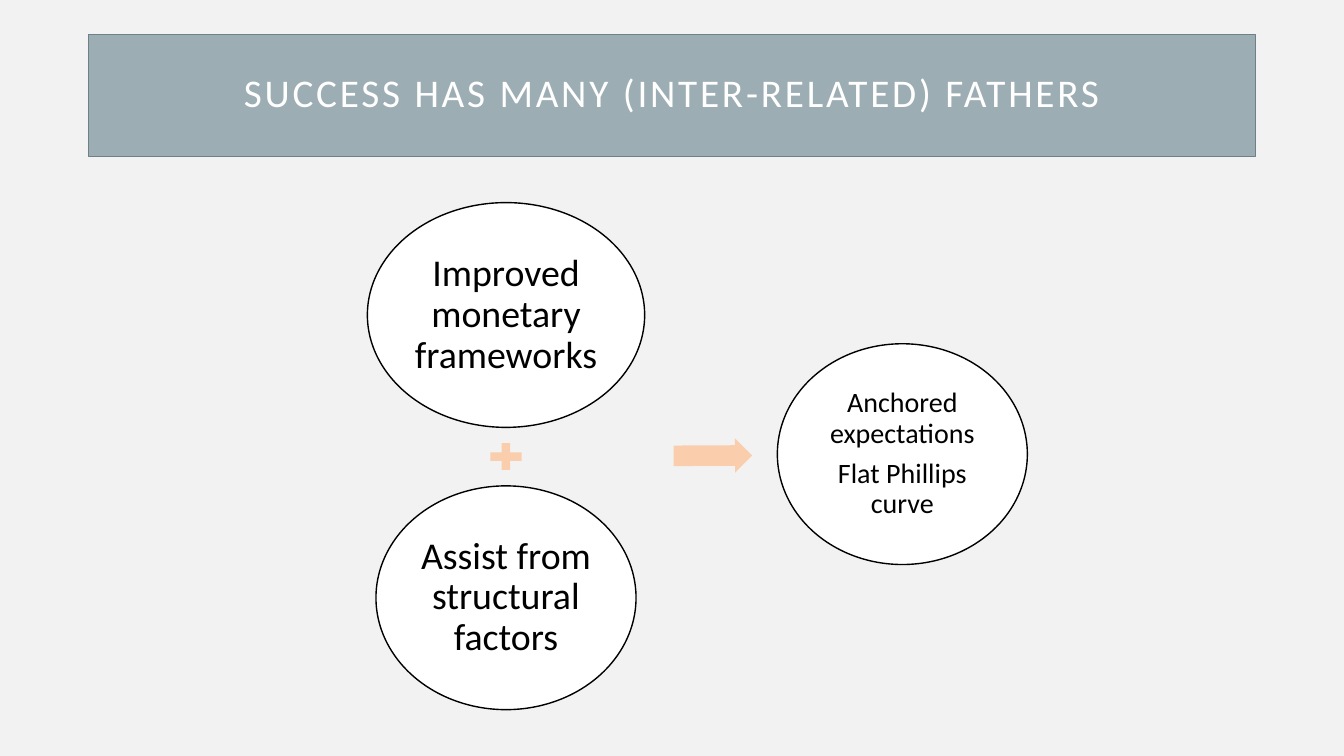
import pptx
import pptx.util
import pptx.dml.color
import pptx.enum.shapes
import pptx.enum.text

Pt = pptx.util.Pt
KIND = pptx.enum.shapes.MSO_SHAPE
COLORS = {"page": "F2F2F2", "banner": "9CADB3", "edge": "6E8088",
          "white": "FFFFFF", "ink": "000000", "peach": "FACEAC"}

deck = pptx.Presentation()
deck.slide_width = pptx.util.Inches(13.33)
deck.slide_height = pptx.util.Inches(7.5)
COLUMN, ROW = deck.slide_width / 100, deck.slide_height / 100
page = deck.slides.add_slide(deck.slide_layouts[5])


def paint(target, color):
    target.solid()
    target.fore_color.rgb = pptx.dml.color.RGBColor.from_string(COLORS[color])


def write(box, lines, size, color, inset):
    frame = box.text_frame
    frame_format = {"word_wrap": True,
                    "auto_size": pptx.enum.text.MSO_AUTO_SIZE.NONE,
                    "vertical_anchor": pptx.enum.text.MSO_ANCHOR.MIDDLE}
    for side in ("left", "top", "right", "bottom"):
        frame_format["margin_" + side] = pptx.util.Inches(inset)
    for name, value in frame_format.items():
        setattr(frame, name, value)
    frame.text = "\n".join(lines)
    for para in frame.paragraphs:
        para_format = {"alignment": pptx.enum.text.PP_ALIGN.CENTER,
                       "line_spacing": 0.9, "space_before": Pt(0),
                       "space_after": Pt(0.35 * size)}
        for name, value in para_format.items():
            setattr(para, name, value)
        for span in para.runs:
            span.font.name, span.font.size = "Calibri", Pt(size)
            paint(span.font.fill, color)


# Background
paint(page.background.fill, "page")

# Title banner
title = page.shapes.title
banner = {"left": 6.6 * COLUMN, "top": 4.53 * ROW,
          "width": 86.8 * COLUMN, "height": 16.13 * ROW}
for name, value in banner.items():
    setattr(title, name, round(value))
paint(title.fill, "banner")
paint(title.line.fill, "edge")
title.line.width = Pt(0.75)
write(title, ["SUCCESS HAS MANY (INTER-RELATED) FATHERS"], 28, "white", 0.2)
title_para = title.text_frame.paragraphs[0]
title_para.space_after = Pt(0)
title_para.runs[0].font._element.set("spc", "200")

# Equation: centre column, centre row, columns wide, rows high, text, size
CAUSES = 37.65
parts = [
    (KIND.OVAL, CAUSES, 41.67, 20.63, 29.73, ["Improved monetary frameworks"], 27),
    (KIND.MATH_PLUS, CAUSES, 60.4, 3.15, 4.8, [], 0),
    (KIND.OVAL, CAUSES, 79.07, 19.35, 29.6, ["Assist from structural factors"], 27),
    (KIND.RIGHT_ARROW, 53.04, 60.27, 5.85, 4.53, [], 0),
    (KIND.OVAL, 67.14, 60.07, 18.6, 29.2,
     ["Anchored expectations", "Flat Phillips curve"], 20),
]
for kind, column, row, wide, high, lines, size in parts:
    shape = page.shapes.add_shape(
        kind, round((column - wide / 2) * COLUMN), round((row - high / 2) * ROW),
        round(wide * COLUMN), round(high * ROW))
    shape.shadow.inherit = False
    if lines:
        paint(shape.fill, "white")
        paint(shape.line.fill, "ink")
        shape.line.width = Pt(1)
        write(shape, lines, size, "ink", 0.04)
    else:
        paint(shape.fill, "peach")
        shape.line.fill.background()
    if kind == KIND.RIGHT_ARROW:
        shape.adjustments[0] = 0.6
        shape.rotation = 359.7

deck.save("out.pptx")
